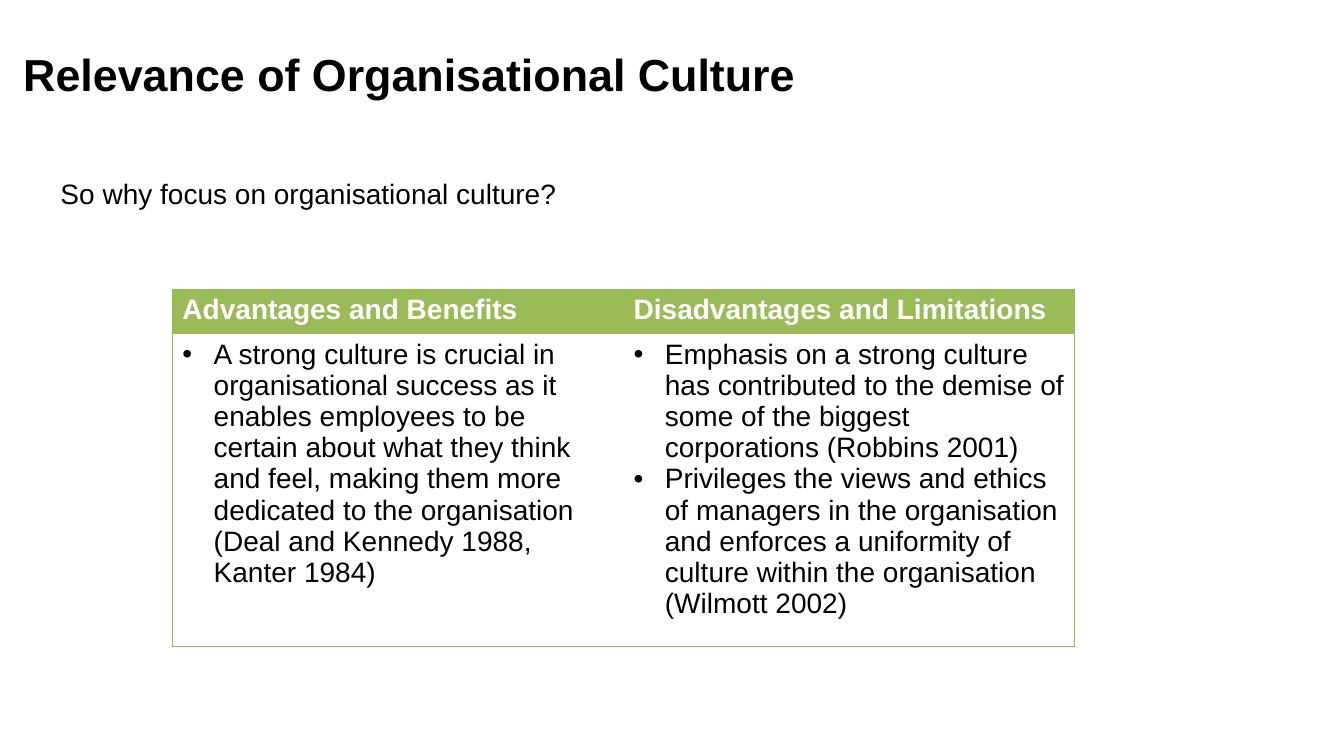
from lxml import etree
from pptx import Presentation
from pptx.dml.color import RGBColor
from pptx.enum.text import MSO_ANCHOR, MSO_AUTO_SIZE, PP_ALIGN
from pptx.oxml.ns import qn
from pptx.util import Inches, Pt

TOP, LEFT, NO_FIT = MSO_ANCHOR.TOP, PP_ALIGN.LEFT, MSO_AUTO_SIZE.NONE
BLACK = RGBColor(0, 0, 0)
WHITE = RGBColor(255, 255, 255)
GREEN = RGBColor(0x9B, 0xBB, 0x59)
EDGE = RGBColor(0x98, 0xB9, 0x55)

TITLE = "Relevance of Organisational Culture"
LEAD = "So why focus on organisational culture?"
COLUMNS = [
    ("Advantages and Benefits", [
        "A strong culture is crucial in organisational success as it enables "
        "employees to be certain about what they think and feel, making them "
        "more dedicated to the organisation (Deal and Kennedy 1988, Kanter 1984)",
    ]),
    ("Disadvantages and Limitations", [
        "Emphasis on a strong culture has contributed to the demise of some of "
        "the biggest corporations (Robbins 2001)",
        "Privileges the views and ethics of managers in the organisation and "
        "enforces a uniformity of culture within the organisation (Wilmott 2002)",
    ]),
]
ROWS = (0.44, 3.1)
TABLE = (1.71, 2.87, 8.95, sum(ROWS))
HANG = Inches(0.31)


def style(par, size, color, bold=False):
    par.alignment = LEFT
    for run in par.runs:
        font = run.font
        font.name, font.size, font.bold = "Arial", Pt(size), bold
        font.color.rgb = color


def fill_box(shape, box, text, size, bold=False):
    shape.left, shape.top, shape.width, shape.height = map(Inches, box)
    frame = shape.text_frame
    frame.text = text
    frame.word_wrap, frame.auto_size, frame.vertical_anchor = True, NO_FIT, TOP
    par = frame.paragraphs[0]
    add_bullet(par, None)
    par.line_spacing, par.space_before = 0.9, Pt(0)
    style(par, size, BLACK, bold)


def add_bullet(par, char):
    """Give the paragraph a hanging bullet, or none if char is None."""
    props = par._p.get_or_add_pPr()
    props.set("marL", str(HANG if char else 0))
    props.set("indent", str(-HANG if char else 0))
    if char:
        etree.SubElement(props, qn("a:buFont")).set("typeface", "Arial")
        etree.SubElement(props, qn("a:buChar")).set("char", char)
    else:
        etree.SubElement(props, qn("a:buNone"))


def set_edges(cell, shown):
    """Draw the cell sides named in shown and hide the others."""
    props = cell._tc.get_or_add_tcPr()
    for pos, side in enumerate("LRTB"):
        line = etree.Element(qn("a:ln" + side), w=str(Pt(0.75)))
        if side in shown:
            solid = etree.SubElement(line, qn("a:solidFill"))
            etree.SubElement(solid, qn("a:srgbClr")).set("val", str(EDGE))
        else:
            etree.SubElement(line, qn("a:noFill"))
        props.insert(pos, line)


def add_table(slide):
    frame = slide.shapes.add_table(len(ROWS), len(COLUMNS), *map(Inches, TABLE))
    table = frame.table
    for row, high in zip(table.rows, ROWS):
        row.height = Inches(high)
    for col, (head, points) in enumerate(COLUMNS):
        top, body = table.cell(0, col), table.cell(1, col)
        top.text = head
        style(top.text_frame.paragraphs[0], 20, WHITE, True)
        top.fill.solid()
        top.fill.fore_color.rgb = GREEN
        body.text = "\n".join(points)
        for par in body.text_frame.paragraphs:
            add_bullet(par, "•")
            style(par, 20, BLACK)
        body.fill.background()
        for cell in (top, body):
            set_edges(cell, "TB" + "LR"[col])


def main():
    deck = Presentation()
    deck.slide_width, deck.slide_height = Inches(13.33), Inches(7.5)
    slide = deck.slides.add_slide(deck.slide_layouts[1])
    fill_box(slide.shapes.title, (0.13, 0.47, 9.32, 1.06), TITLE, 32, True)
    fill_box(slide.placeholders[1], (0.5, 1.74, 8.95, 4.77), LEAD, 20)
    add_table(slide)
    deck.save("out.pptx")


if __name__ == "__main__":
    main()
